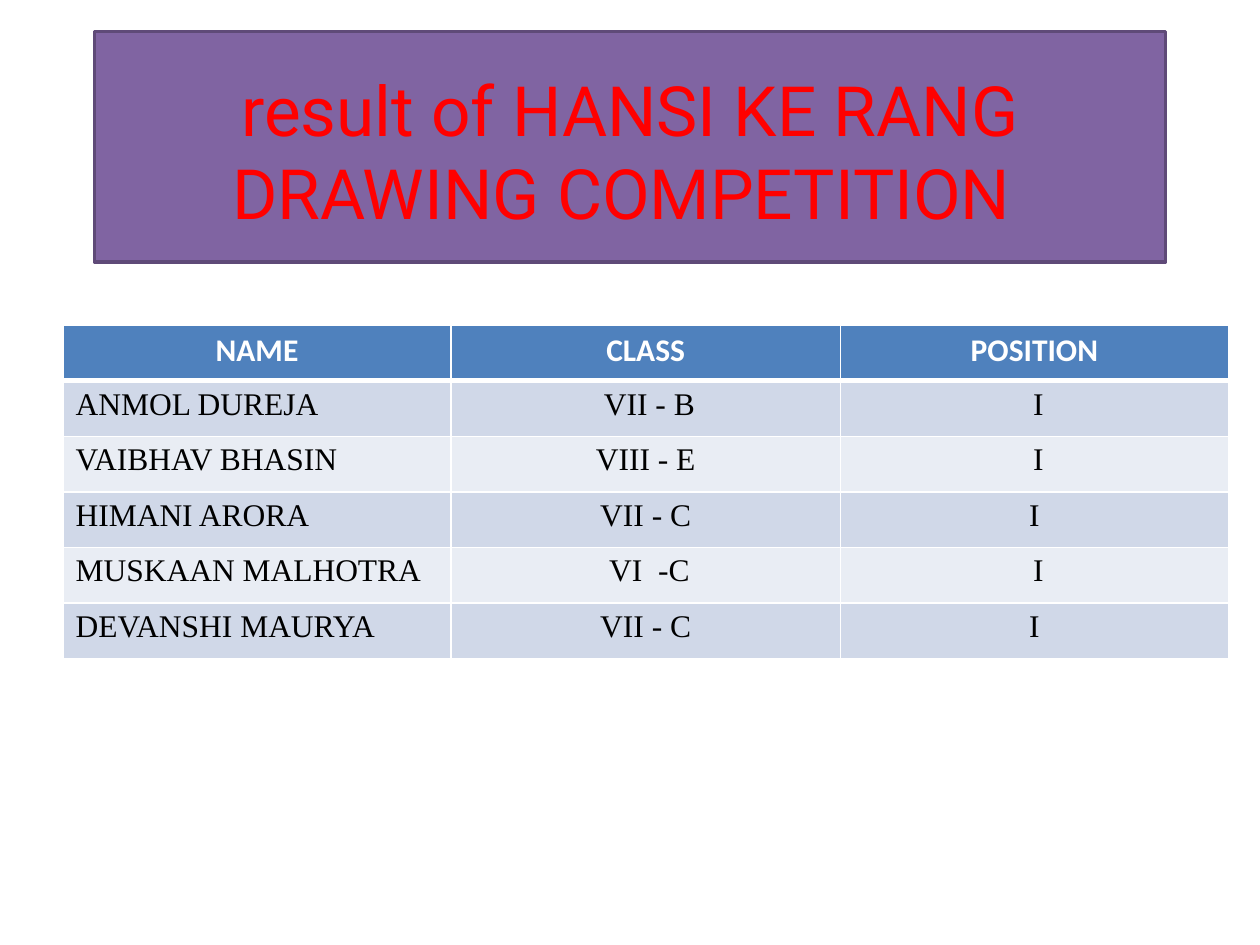
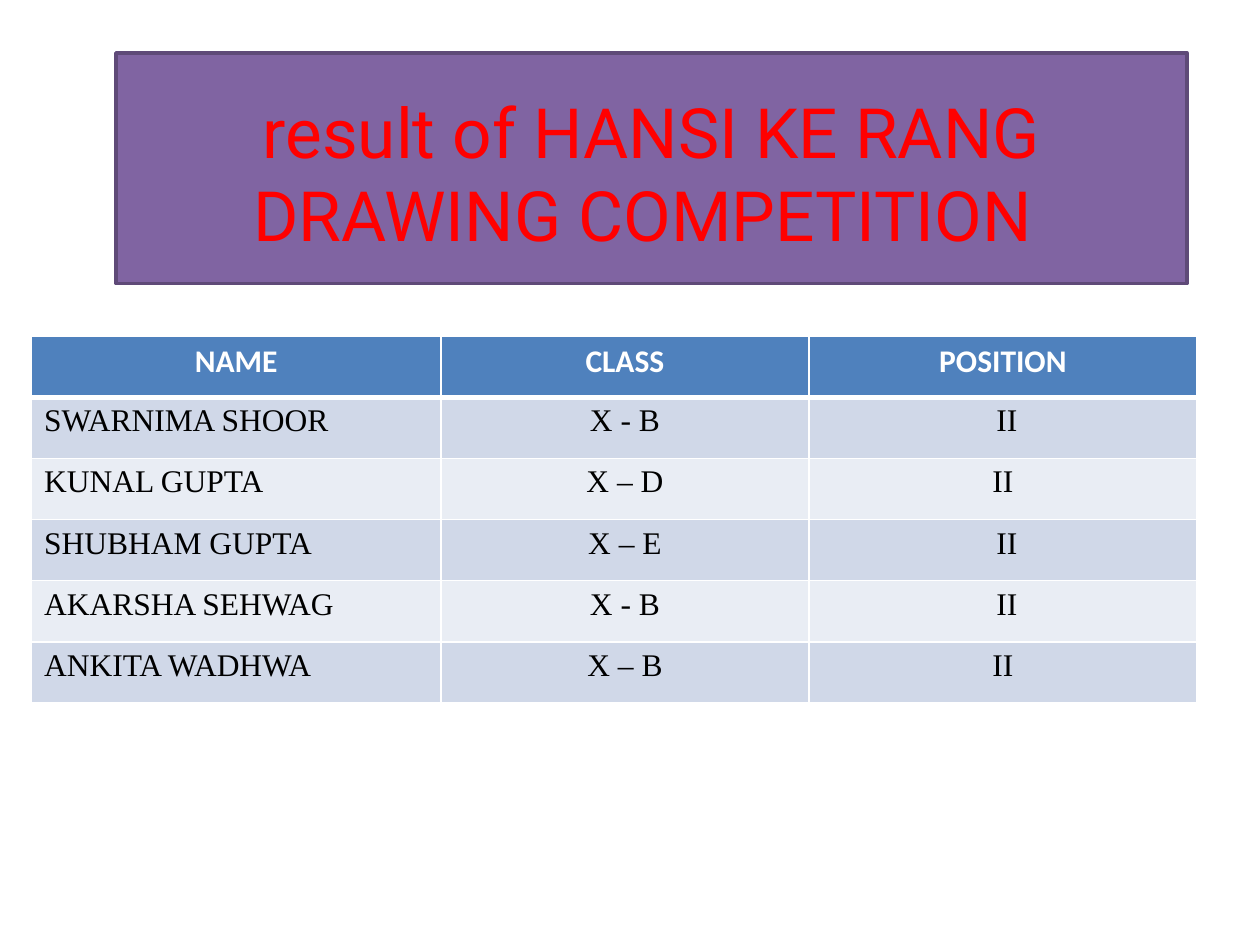
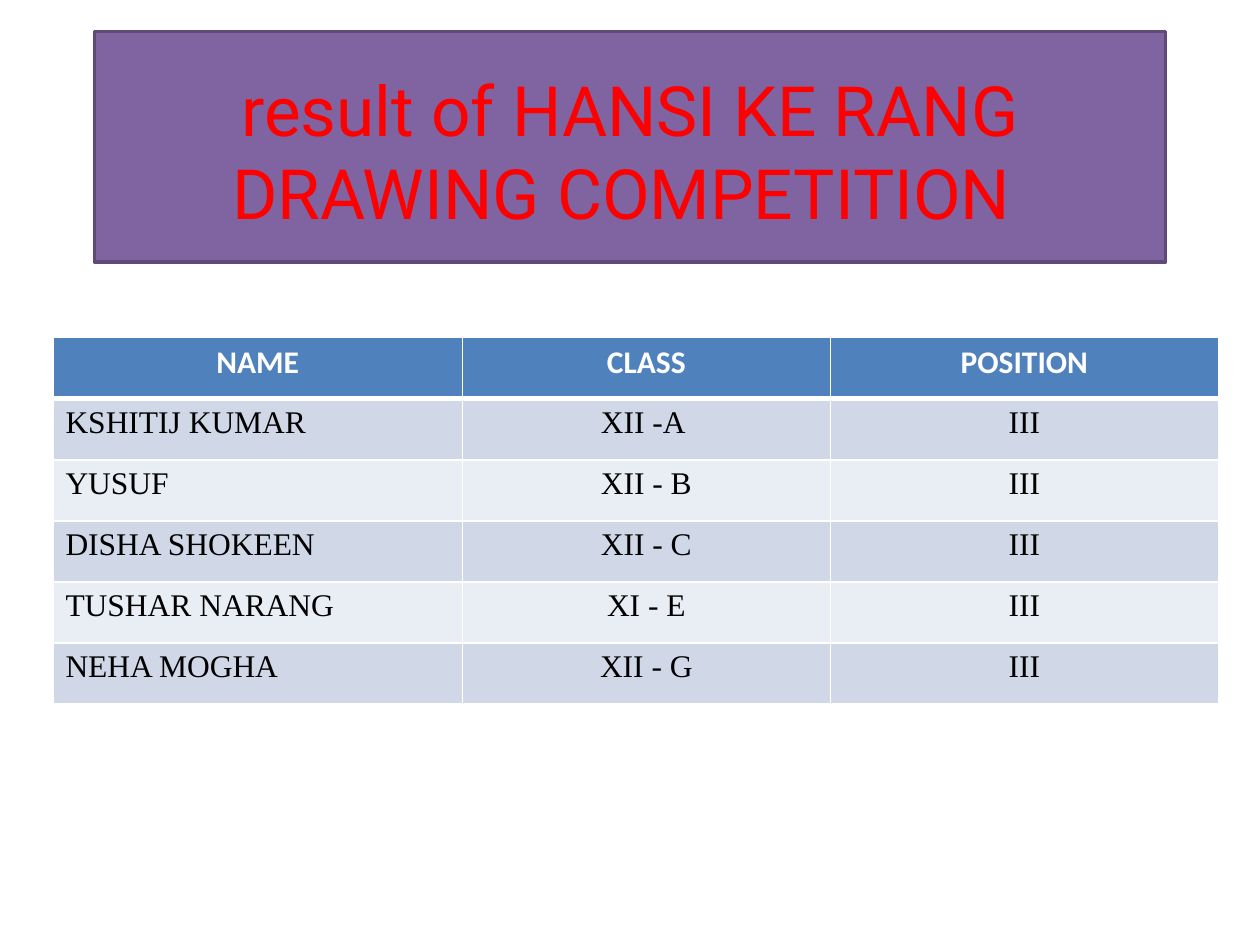
from lxml.etree import SubElement
from pptx import Presentation
from pptx.dml.color import RGBColor
from pptx.enum.text import MSO_ANCHOR, MSO_AUTO_SIZE, PP_ALIGN
from pptx.oxml.ns import qn
from pptx.util import Inches, Pt

COLORS = {
    "banner": "8064A2",
    "banner_line": "5F4A78",
    "title": "FF0000",
    "header": "4F81BD",
    "band_dark": "D0D8E8",
    "band_light": "E9EDF4",
    "white": "FFFFFF",
    "black": "000000",
}
TITLE = "result of HANSI KE RANG DRAWING COMPETITION "
HEADINGS = ("NAME", "CLASS", "POSITION")
EQUAL_COLUMNS = (3.08, 3.09, 3.08)
WIDE_NAME_COLUMNS = (3.25, 2.92, 3.08)

RESULTS = [
    {
        "banner": (0.75, 0.25),
        "table": (0.5, 2.58, 2.65),
        "columns": EQUAL_COLUMNS,
        "winners": [
            ("ANMOL DUREJA", " VII - B", " I"),
            ("VAIBHAV BHASIN", "VIII - E", " I"),
            ("HIMANI ARORA", "VII - C", "I"),
            ("MUSKAAN MALHOTRA", " VI  -C", " I"),
            ("DEVANSHI MAURYA", "VII - C", "I"),
        ],
    },
    {
        "banner": (0.92, 0.42),
        "table": (0.25, 2.67, 2.91),
        "columns": WIDE_NAME_COLUMNS,
        "winners": [
            ("SWARNIMA SHOOR", "X - B", " II"),
            ("KUNAL GUPTA", "X – D", "II"),
            ("SHUBHAM GUPTA", "X – E", " II"),
            ("AKARSHA SEHWAG", "X - B", " II"),
            ("ANKITA WADHWA", "X – B", "II"),
        ],
    },
    {
        "banner": (0.75, 0.25),
        "table": (0.42, 2.68, 2.91),
        "columns": WIDE_NAME_COLUMNS,
        "winners": [
            ("KSHITIJ KUMAR", "XII -A ", "III"),
            ("YUSUF", "XII - B", "III"),
            ("DISHA SHOKEEN", "XII - C", "III"),
            ("TUSHAR NARANG", "XI - E", "III"),
            ("NEHA MOGHA", "XII - G", "III"),
        ],
    },
]


def color(name):
    """Return the named colour."""
    return RGBColor.from_string(COLORS[name])


class ResultDeck:
    """Hold the shared style and the current slide."""

    def __init__(self):
        """Start an empty deck of 10 by 7.5 inches."""
        self.presentation = Presentation()
        self.presentation.slide_width = Inches(10)
        self.presentation.slide_height = Inches(7.5)
        self.slide = None

    def add_slide(self):
        """Make a new title-only slide current."""
        layout = self.presentation.slide_layouts[5]
        self.slide = self.presentation.slides.add_slide(layout)

    def format_text(self, paragraph, font_name, size, font_color, bold, align):
        """Set the alignment of a paragraph and the font of its runs."""
        paragraph.alignment = align
        for run in paragraph.runs:
            run.font.name = font_name
            run.font.size = Pt(size)
            run.font.bold = bold
            run.font.color.rgb = color(font_color)

    def add_banner(self, text, left, top):
        """Turn the title placeholder into the purple banner."""
        banner = self.slide.shapes.title
        banner.left, banner.top = Inches(left), Inches(top)
        banner.width, banner.height = Inches(8.5), Inches(1.83)
        banner.fill.solid()
        banner.fill.fore_color.rgb = color("banner")
        banner.line.color.rgb = color("banner_line")
        banner.line.width = Pt(2)
        text_frame = banner.text_frame
        text_frame.text = text
        text_frame.word_wrap = True
        text_frame.auto_size = MSO_AUTO_SIZE.NONE
        text_frame.vertical_anchor = MSO_ANCHOR.MIDDLE
        text_frame.margin_top = Inches(0.11)
        self.format_text(text_frame.paragraphs[0], "Roboto", 39.6, "title",
                         False, PP_ALIGN.CENTER)

    def add_borders(self, cell, top, bottom):
        """Draw white cell borders, with top and bottom widths in points."""
        properties = cell._tc.get_or_add_tcPr()
        for side, width in (("L", 1), ("R", 1), ("T", top), ("B", bottom)):
            line = SubElement(properties, qn(f"a:ln{side}"), w=str(Pt(width)))
            fill = SubElement(line, qn("a:solidFill"))
            SubElement(fill, qn("a:srgbClr"), val=COLORS["white"])

    def add_cell(self, cell, text, row, column):
        """Fill and format one cell by its place in the table."""
        self.add_borders(cell, top=3 if row == 1 else 1,
                         bottom=3 if row == 0 else 1)
        band = "band_dark" if row % 2 else "band_light"
        cell.fill.solid()
        cell.fill.fore_color.rgb = color(band if row else "header")
        cell.text_frame.text = text
        font_name, font_color = (
            ("Times New Roman", "black") if row else ("Calibri", "white"))
        align = PP_ALIGN.LEFT if row and column == 0 else PP_ALIGN.CENTER
        self.format_text(cell.text_frame.paragraphs[0], font_name, 18,
                         font_color, row == 0, align)

    def add_result_table(self, winners, columns, left, top, height):
        """Add the table of winners under its heading row."""
        rows = [HEADINGS, *winners]
        table = self.slide.shapes.add_table(
            len(rows), len(columns), Inches(left), Inches(top),
            Inches(sum(columns)), Inches(height)).table
        for column, width in zip(table.columns, columns):
            column.width = Inches(width)
        for row, texts in enumerate(rows):
            for column, text in enumerate(texts):
                self.add_cell(table.cell(row, column), text, row, column)


def main():
    """Build one slide for each set of results."""
    deck = ResultDeck()
    for result in RESULTS:
        deck.add_slide()
        deck.add_banner(TITLE, *result["banner"])
        deck.add_result_table(result["winners"], result["columns"],
                              *result["table"])
    deck.presentation.save("out.pptx")


if __name__ == "__main__":
    main()
